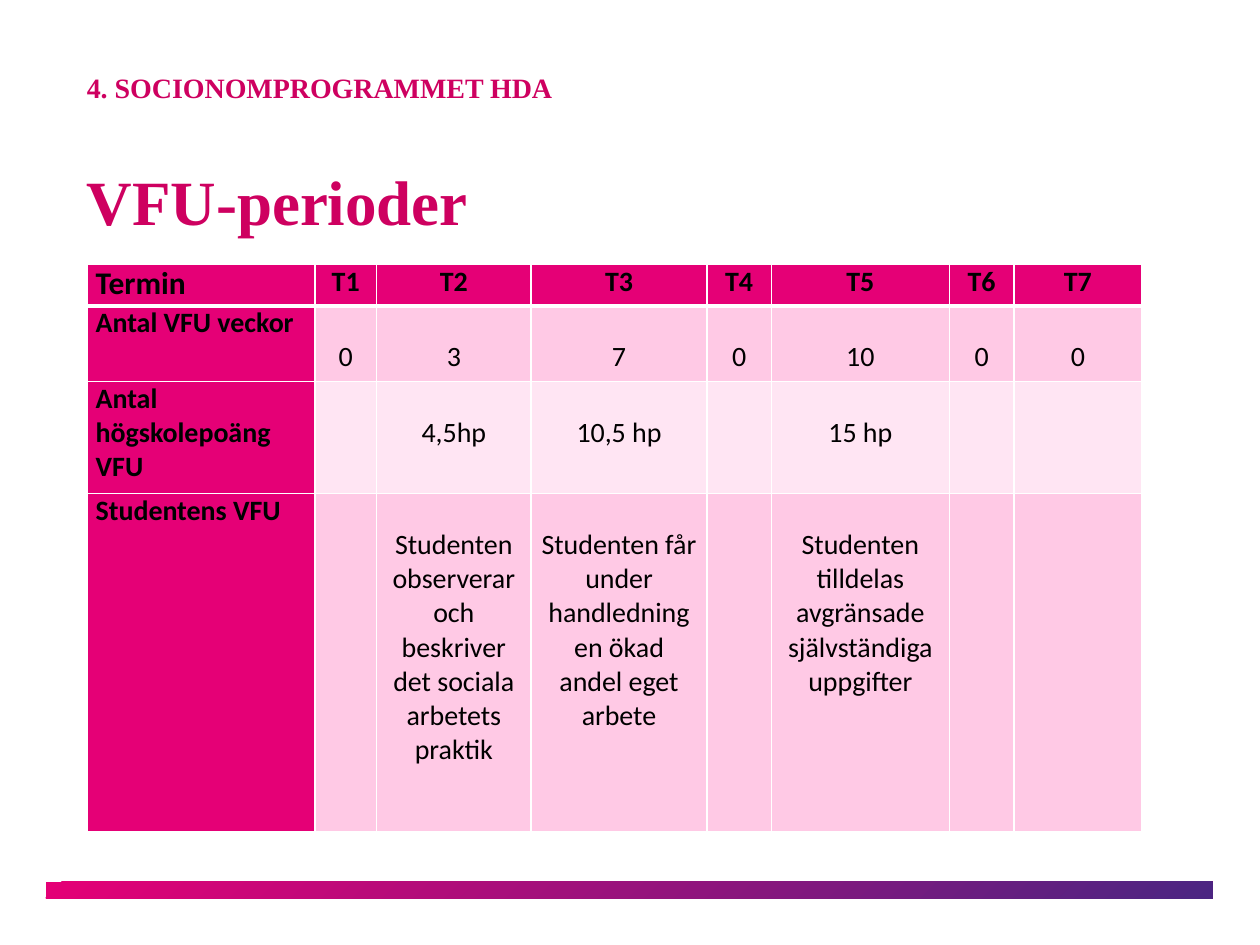
"""Build the slide on placement periods in the social work programme."""
from lxml import etree
from pptx import Presentation
from pptx import util as u
from pptx.dml.color import RGBColor
from pptx.enum import shapes, text
from pptx.oxml.ns import qn


def rgb(value):
    return RGBColor.from_string(value)


def write(paragraph, words, size, font, color, bold):
    run = paragraph.add_run()
    run.text = words
    run.font.size = u.Pt(size)
    run.font.name = font
    run.font.bold = bold
    run.font.color.rgb = rgb(color)


deck = Presentation()
deck.slide_width, deck.slide_height = u.Cm(25.4), u.Cm(19.05)
slide = deck.slides.add_slide(deck.slide_layouts[6])

footer = slide.shapes.add_shape(
    shapes.MSO_SHAPE.RECTANGLE, u.Cm(0.92), u.Cm(17.78), u.Cm(23.52), u.Cm(0.33))
footer.shadow.inherit = False
footer.line.fill.background()
footer.fill.gradient()
footer.fill.gradient_angle = 315
for stop, color in zip(footer.fill.gradient_stops, ("E50076", "4B2582")):
    stop.color.rgb = rgb(color)

headings = [
    ("VFU-perioder", 2.95, 2.03, 36, 1.1, text.MSO_ANCHOR.MIDDLE),
    ("4. SOCIONOMPROGRAMMET HDA", 1.5, 1.45, 16, 0.9, text.MSO_ANCHOR.TOP),
]
for words, top, height, size, spacing, anchor in headings:
    heading = slide.shapes.add_textbox(
        u.Cm(1.75), u.Cm(top), u.Cm(18.95), u.Cm(height)).text_frame
    heading.word_wrap = True
    heading.vertical_anchor = anchor
    heading.margin_left = heading.margin_right = 0
    heading.margin_top = heading.margin_bottom = 0
    heading.paragraphs[0].line_spacing = spacing
    write(heading.paragraphs[0], words, size, "Times New Roman", "CE0060", True)

periods = [
    ["Termin", "T1", "T2", "T3", "T4", "T5", "T6", "T7"],
    ["Antal VFU veckor", "0", "3", "7", "0", "10", "0", "0"],
    ["Antal högskolepoäng VFU", "", "4,5hp", "10,5 hp", "", "15 hp", "", ""],
    ["Studentens VFU", "",
     "Studenten observerar och beskriver det sociala arbetets praktik",
     "Studenten får under handledning en ökad andel eget arbete", "",
     "Studenten tilldelas avgränsade självständiga uppgifter", "", ""],
]
widths = [4.6, 1.24, 3.12, 3.54, 1.3, 3.59, 1.3, 2.58]
heights = [0.84, 1.52, 2.26, 6.81]
row_fills = ["E50076", "FFC9E5", "FFE5F3", "FFC9E5"]

table = slide.shapes.add_table(
    len(heights), len(widths), u.Cm(1.75), u.Cm(5.33),
    u.Cm(sum(widths)), u.Cm(sum(heights))).table
for column, width in zip(table.columns, widths):
    column.width = u.Cm(width)
for row, height in zip(table.rows, heights):
    row.height = u.Cm(height)

for r, row in enumerate(periods):
    for c, words in enumerate(row):
        cell = table.cell(r, c)
        label = r == 0 or c == 0
        cell.margin_left = cell.margin_right = u.Cm(0.18)
        cell.margin_top = u.Cm(0 if label else 0.69)
        cell.margin_bottom = 0
        for side in ("lnL", "lnR", "lnT", "lnB"):
            thick = (r, side) in ((0, "lnB"), (1, "lnT"))
            border = etree.SubElement(
                cell._tc.get_or_add_tcPr(), qn(f"a:{side}"), w=str(u.Pt(3 if thick else 1)))
            paint = etree.SubElement(border, qn("a:solidFill"))
            etree.SubElement(paint, qn("a:srgbClr"), val="FFFFFF")
        cell.fill.solid()
        cell.fill.fore_color.rgb = rgb(row_fills[0] if label else row_fills[r])
        if words:
            paragraph = cell.text_frame.paragraphs[0]
            paragraph.alignment = text.PP_ALIGN.CENTER if c else text.PP_ALIGN.LEFT
            write(paragraph, words, 16 if r or c else 18, "Calibri", "000000", label)

deck.save("out.pptx")
